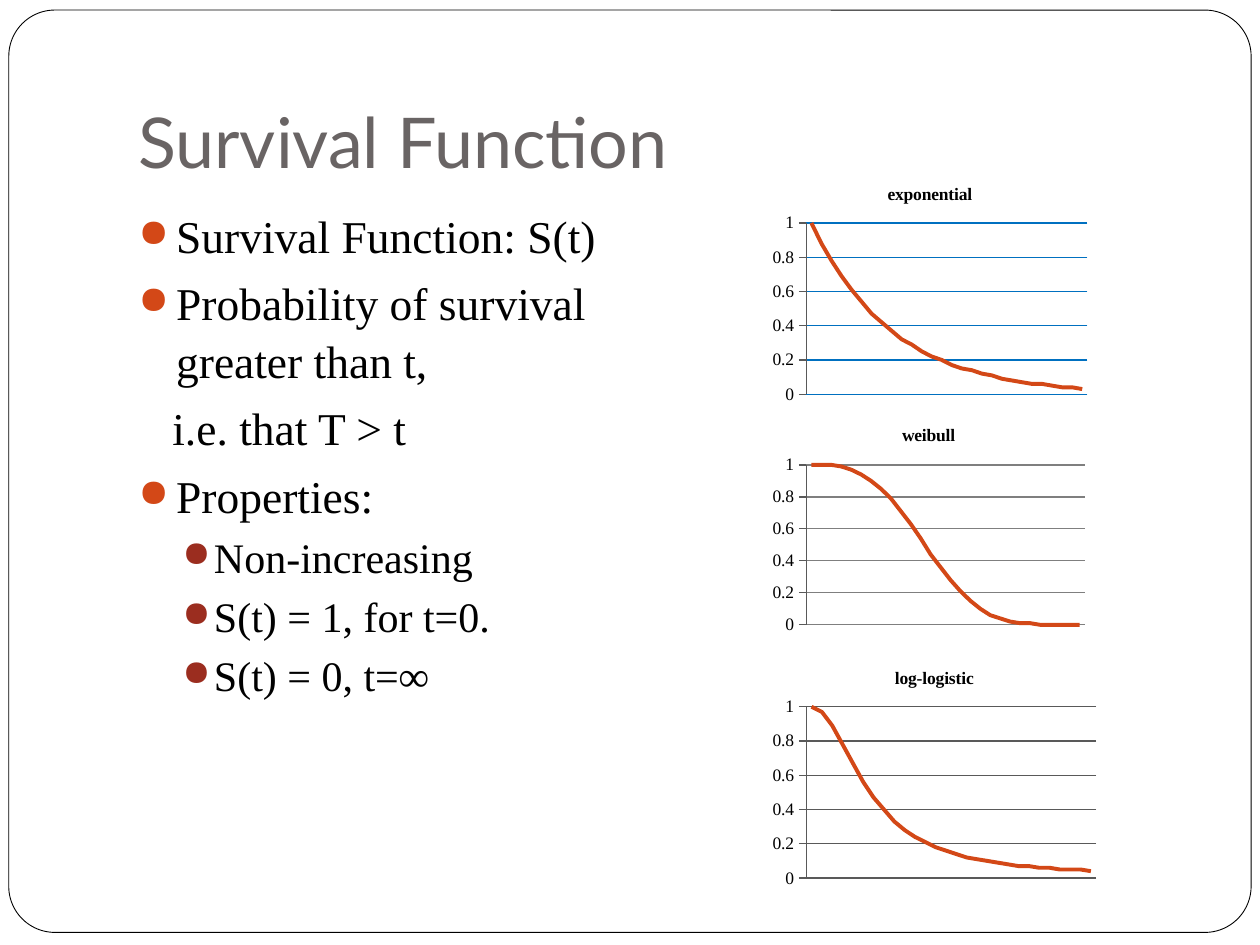
from lxml import etree
from pptx import Presentation
from pptx.chart.data import CategoryChartData
from pptx.dml.color import RGBColor
from pptx.enum import chart as ch, shapes, text
from pptx.oxml import parse_xml
from pptx.oxml.ns import nsdecls, qn
from pptx.util import Inches, Pt

COLORS = {
    "paper": "FFFFFF", "ink": "000000", "heading": "696464",
    "bullet": "D34817", "sub_bullet": "9B2D1F", "curve": "D34817",
    "axis": "595959", "blue_grid": "0070C0", "gray_grid": "7F7F7F", "dark_grid": "595959",
}
SERIF = "Times New Roman"


def color(name):
    return RGBColor.from_string(COLORS[name])


def style_font(font, size, name, shade):
    font.size = Pt(size)
    font.name = name
    font.color.rgb = color(shade)


prs = Presentation()
prs.slide_width, prs.slide_height = Inches(10), Inches(7.5)
slide = prs.slides.add_slide(prs.slide_layouts[6])

frame = slide.shapes.add_shape(
    shapes.MSO_SHAPE.ROUNDED_RECTANGLE, Inches(0.07), Inches(0.08), Inches(9.86), Inches(7.32))
frame.adjustments[0] = 0.05
frame.shadow.inherit = False
frame.fill.solid()
frame.fill.fore_color.rgb = color("paper")
frame.line.color.rgb = color("ink")
frame.line.width = Pt(0.5)

heading = slide.shapes.add_textbox(Inches(1), Inches(0.3), Inches(8.5), Inches(1.25)).text_frame
heading.word_wrap = True
heading.vertical_anchor = text.MSO_ANCHOR.BOTTOM
heading.margin_bottom = Inches(0.1)
heading.text = "Survival Function"
style_font(heading.paragraphs[0].font, 40, "Lato", "heading")

points = [
    ("Survival Function: S(t)", "bullet"),
    ("Probability of survival greater than t,", "bullet"),
    ("i.e. that T > t", None),
    ("Properties:", "bullet"),
    ("Non-increasing", "sub_bullet"),
    ("S(t) = 1, for t=0.", "sub_bullet"),
    ("S(t) = 0, t=", "sub_bullet"),
]
layouts = {
    "bullet": (0, 26, 5.8, 0.3, -0.3),
    None: (0, 26, 5.8, 0.27, 0),
    "sub_bullet": (1, 24, 3.7, 0.6, -0.25),
}
body = slide.shapes.add_textbox(Inches(1), Inches(1.58), Inches(4.1), Inches(5)).text_frame
body.word_wrap = True
for i, (wording, bullet) in enumerate(points):
    point = body.paragraphs[0] if i == 0 else body.add_paragraph()
    level, size, before, margin, indent = layouts[bullet]
    point.add_run().text = wording
    point.level = level
    point.space_before = Pt(before)
    point.line_spacing = 1.05
    style_font(point.font, size, SERIF, "ink")
    props = point._p.get_or_add_pPr()
    props.set("marL", str(Inches(margin)))
    props.set("indent", str(Inches(indent)))
    if bullet:
        marks = [
            f'<a:buClr {nsdecls("a")}><a:srgbClr val="{COLORS[bullet]}"/></a:buClr>',
            f'<a:buSzPct {nsdecls("a")} val="85000"/>',
            f'<a:buChar {nsdecls("a")} char="●"/>',
        ]
        for mark in marks:
            props.insert_element_before(parse_xml(mark), "a:tabLst", "a:defRPr", "a:extLst")
infinity = point.add_run()
infinity.text = "∞"
infinity.font.bold = True

curves = [
    ("exponential", 1.33, 2.6, 1.92, "blue_grid",
     [1, 0.88, 0.78, 0.69, 0.61, 0.54, 0.47, 0.42, 0.37, 0.32, 0.29, 0.25, 0.22, 0.2,
      0.17, 0.15, 0.14, 0.12, 0.11, 0.09, 0.08, 0.07, 0.06, 0.06, 0.05, 0.04, 0.04, 0.03]),
    ("weibull", 3.25, 2.58, 1.83, "gray_grid",
     [1, 1, 1, 0.99, 0.97, 0.94, 0.9, 0.85, 0.79, 0.71, 0.63, 0.54, 0.44, 0.36,
      0.28, 0.21, 0.15, 0.1, 0.06, 0.04, 0.02, 0.01, 0.01, 0, 0, 0, 0, 0]),
    ("log-logistic", 5.17, 2.67, 1.92, "dark_grid",
     [1, 0.97, 0.89, 0.78, 0.67, 0.56, 0.47, 0.4, 0.33, 0.28, 0.24, 0.21, 0.18, 0.16,
      0.14, 0.12, 0.11, 0.1, 0.09, 0.08, 0.07, 0.07, 0.06, 0.06, 0.05, 0.05, 0.05, 0.04]),
]
for name, top, width, height, grid, survival in curves:
    data = CategoryChartData()
    data.categories = [str(t) for t in range(1, len(survival) + 1)]
    data.add_series(name, survival)
    chart = slide.shapes.add_chart(
        ch.XL_CHART_TYPE.LINE, Inches(6.08), Inches(top), Inches(width), Inches(height), data).chart
    style_font(chart.font, 10, SERIF, "ink")
    chart.has_legend = False
    chart.has_title = True
    chart.chart_title.include_in_layout = False
    chart.chart_title.text_frame.text = name
    title_font = chart.chart_title.text_frame.paragraphs[0].font
    style_font(title_font, 10, SERIF, "ink")
    title_font.bold = True

    chart.plots[0].vary_by_categories = False
    curve = chart.plots[0].series[0]
    curve.smooth = False
    curve.marker.style = ch.XL_MARKER_STYLE.NONE
    curve.format.line.color.rgb = color("curve")
    curve.format.line.width = Pt(2.25)

    chart.category_axis.visible = False
    probability = chart.value_axis
    probability.minimum_scale, probability.maximum_scale = 0, 1
    probability.major_unit = 0.2
    probability.major_tick_mark = ch.XL_TICK_MARK.OUTSIDE
    probability.tick_labels.number_format = "General"
    probability.tick_labels.number_format_is_linked = False
    probability.format.line.color.rgb = color("axis")
    probability.major_gridlines.format.line.color.rgb = color(grid)
    probability.major_gridlines.format.line.width = Pt(0.75)

    plot_area = chart._chartSpace.chart.plotArea
    for old in plot_area.findall(qn("c:layout")):
        plot_area.remove(old)
    layout = etree.Element(qn("c:layout"))
    manual = etree.SubElement(layout, qn("c:manualLayout"))
    for tag, value in [
        ("layoutTarget", "inner"), ("xMode", "edge"), ("yMode", "edge"),
        ("x", 0.32 / width), ("y", 0.44 / height),
        ("w", (width - 0.37) / width), ("h", (height - 0.56) / height),
    ]:
        etree.SubElement(manual, qn(f"c:{tag}")).set("val", str(value))
    plot_area.insert(0, layout)

prs.save("out.pptx")
